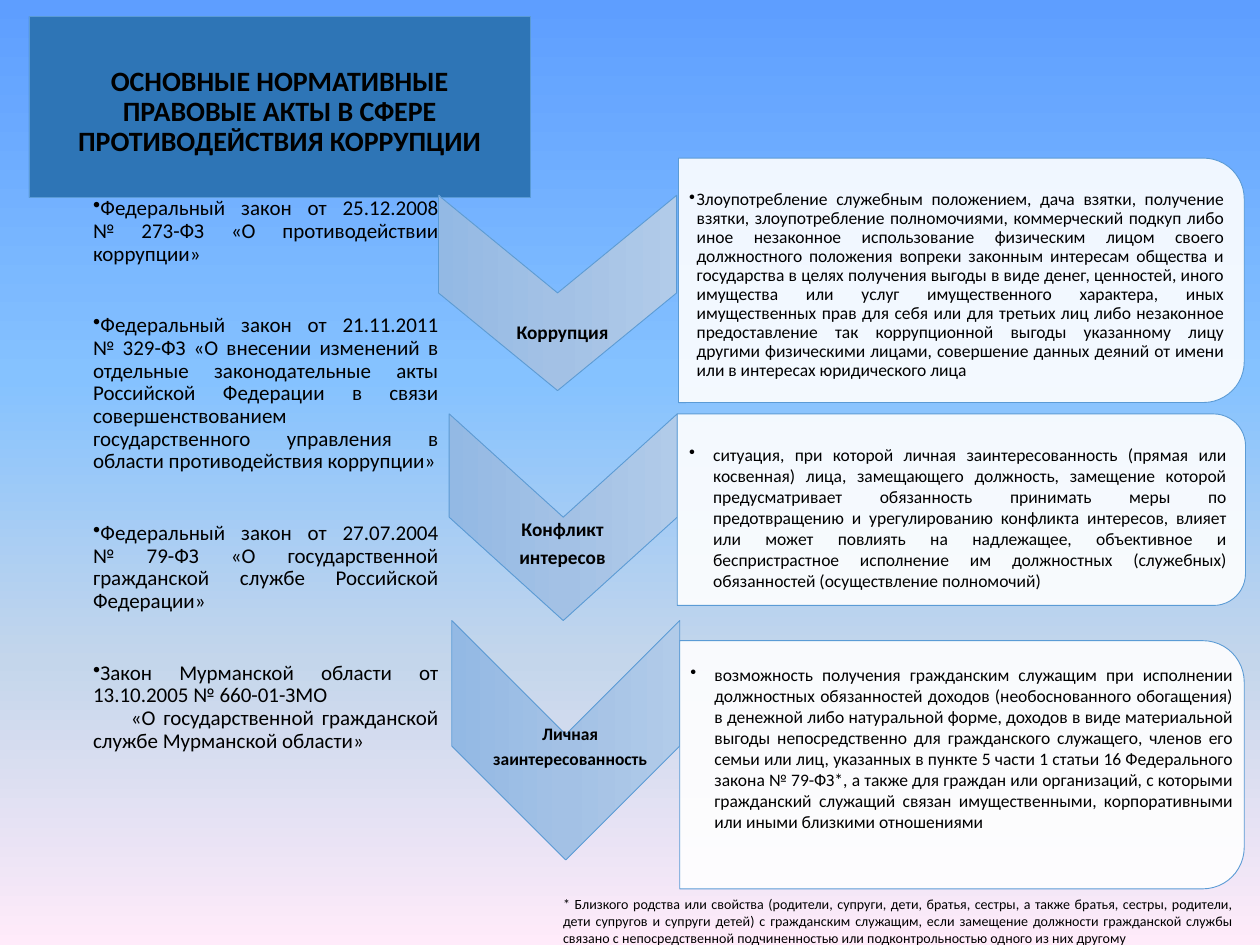
import copy

import pptx
import pptx.dml.color
import pptx.enum.shapes
import pptx.enum.text
import pptx.oxml
import pptx.oxml.ns
import pptx.util

COLUMNS, ROWS = 100, 75
colour = pptx.dml.color.RGBColor.from_string
qn = pptx.oxml.ns.qn
Pt = pptx.util.Pt
ALIGN = pptx.enum.text.PP_ALIGN
ANCHOR = pptx.enum.text.MSO_ANCHOR
PRESET = pptx.enum.shapes.MSO_SHAPE

deck = pptx.Presentation()
deck.slide_width = pptx.util.Inches(10)
deck.slide_height = pptx.util.Inches(7.5)
page = deck.slides.add_slide(deck.slide_layouts[6])
cell = deck.slide_width // COLUMNS


def blend(fill, owner, stops):
    """Fill downwards with a gradient of (percent, colour) stops."""
    fill.gradient()
    fill.gradient_angle = 270
    stop_list = owner.find(".//" + qn("a:gsLst"))
    while len(stop_list) < len(stops):
        stop_list.append(copy.deepcopy(stop_list[0]))
    for stop, (percent, shade) in zip(fill.gradient_stops, stops):
        stop.color.rgb = colour(shade)
        stop.position = percent / 100


def write(frame, lines, size, align, bold=False, spacing=1.0, after=0,
          bullet=False, hang=0, anchor=ANCHOR.TOP, insets=None):
    """Write one paragraph per line; a newline is a line break."""
    frame.word_wrap = True
    frame.vertical_anchor = anchor
    if insets:
        (frame.margin_left, frame.margin_top, frame.margin_right,
         frame.margin_bottom) = [int(inset * cell) for inset in insets]
    for number, line in enumerate(lines):
        para = frame.add_paragraph() if number else frame.paragraphs[0]
        para.alignment = align
        para.line_spacing = spacing
        para.space_before = Pt(0)
        para.space_after = Pt(after)
        for part_number, part in enumerate(line.split("\n")):
            if part_number:
                para.add_line_break()
            if part:
                span = para.add_run()
                span.text = part
                span.font.name = "Calibri"
                span.font.size = Pt(size)
                span.font.bold = bold
                span.font.color.rgb = colour("000000")
        for line_break in para._p.findall(qn("a:br")):
            line_break.get_or_add_rPr().set("sz", str(size * 100))
        if bullet:
            props = para._p.get_or_add_pPr()
            props.set("marL", str(int(hang * cell)))
            props.set("indent", str(-int(hang * cell)))
            mark = pptx.oxml.parse_xml(
                '<a:buChar xmlns:a="http://schemas.openxmlformats.org/'
                'drawingml/2006/main" char="•"/>')
            props.append(mark)


# Background
blend(page.background.fill, page._element,
      [(0, "5E9EFF"), (40, "85C2FF"), (70, "C4D6EB"), (100, "FFEBFA")])

# Title
title = page.shapes.add_shape(
    PRESET.RECTANGLE, *[int(n * cell) for n in (2.3, 1.3, 39.8, 14.4)])
title.shadow.inherit = False
title.fill.solid()
title.fill.fore_color.rgb = colour("2E75B6")
title.line.color.rgb = colour("5B9BD5")
title.line.width = Pt(0.5)
write(title.text_frame,
      ["ОСНОВНЫЕ НОРМАТИВНЫЕ ПРАВОВЫЕ АКТЫ В СФЕРЕ ПРОТИВОДЕЙСТВИЯ КОРРУПЦИИ\n"],
      16, ALIGN.CENTER, bold=True, spacing=0.9, anchor=ANCHOR.BOTTOM)

# List of laws
laws = [
    "Федеральный закон от 25.12.2008\n№ 273-ФЗ «О противодействии коррупции»",
    "Федеральный закон от 21.11.2011\n№ 329-ФЗ «О внесении изменений в "
    "отдельные законодательные акты Российской Федерации в связи "
    "совершенствованием государственного управления в области "
    "противодействия коррупции»",
    "Федеральный закон от 27.07.2004\n№ 79-ФЗ «О государственной "
    "гражданской службе Российской Федерации»",
    "Закон Мурманской области от 13.10.2005 № 660-01-ЗМО",
]
law_box = page.shapes.add_textbox(
    *[int(n * cell) for n in (6.4, 15.2, 29.4, 51.4)])
write(law_box.text_frame, laws, 12, ALIGN.JUSTIFY, spacing=0.9, bullet=True)
for para in law_box.text_frame.paragraphs[1:]:
    para.space_before = Pt(28)
# The last law's name is an indented paragraph of its own
name = law_box.text_frame.add_paragraph()
name.alignment = ALIGN.JUSTIFY
name.line_spacing = 0.9
name.space_before = Pt(0)
name._p.get_or_add_pPr().set("marL", "0")
name._p.get_or_add_pPr().set("indent", str(3 * cell))
span = name.add_run()
span.text = "«О государственной гражданской службе Мурманской области»"
span.font.name = "Calibri"
span.font.size = Pt(12)
span.font.color.rgb = colour("000000")

# Terms: chevron, label place, label top inset, label, label size,
# panel, definition place, hanging indent, line spacing, definition
terms = [
    ((36.5, 13.8, 15.5, 18.9), (35.2, 16.4, 18.9, 15.5), 4.7,
     ["Коррупция"], 11,
     (66.6, -0.2, 19.4, 44.9), (53.9, 13.9, 43.3, 17.5), 0.6, 0.9,
     "Злоупотребление служебным положением, дача взятки, получение взятки, "
     "злоупотребление полномочиями, коммерческий подкуп либо иное незаконное "
     "использование физическим лицом своего должностного положения вопреки "
     "законным интересам общества и государства в целях получения выгоды в "
     "виде денег, ценностей, иного имущества или услуг имущественного "
     "характера, иных имущественных прав для себя или для третьих лиц либо "
     "незаконное предоставление так коррупционной выгоды указанному лицу "
     "другими физическими лицами, совершение данных деяний от имени или в "
     "интересах юридического лица"),
    ((36.5, 32, 16.4, 18.1), (35.6, 40.9, 18.1, 4.6), 0.1,
     ["Конфликт", "интересов"], 11,
     (68.7, 17.9, 15.2, 45.1), (53.9, 34.2, 43.5, 13.7), 1.9, 1.0,
     "ситуация, при которой личная заинтересованность (прямая или косвенная) "
     "лица, замещающего должность, замещение которой предусматривает "
     "обязанность принимать меры по предотвращению и урегулированию "
     "конфликта интересов, влияет или может повлиять на надлежащее, "
     "объективное и беспристрастное исполнение им должностных (служебных) "
     "обязанностей (осуществление полномочий)"),
    ((35.4, 49.7, 19, 18.1), (36.4, 57.3, 17.7, 4.1), 0.1,
     ["Личная", "заинтересованность"], 10,
     (66.5, 38.3, 19.7, 44.8), (54, 48.1, 43.9, 22.5), 1.9, 1.0,
     "возможность получения гражданским служащим при исполнении должностных "
     "обязанностей доходов (необоснованного обогащения) в денежной либо "
     "натуральной форме, доходов в виде материальной выгоды непосредственно "
     "для гражданского служащего, членов его семьи или лиц, указанных в "
     "пункте 5 части 1 статьи 16 Федерального закона № 79-ФЗ*, а также для "
     "граждан или организаций, с которыми гражданский служащий связан "
     "имущественными, корпоративными или иными близкими отношениями"),
]
for (chevron_place, label_place, label_inset, label, label_size, panel_place,
     text_place, hang, spacing, definition) in terms:
    # Both outlines are turned a quarter clockwise
    for preset, place in ((PRESET.CHEVRON, chevron_place),
                          (PRESET.ROUND_2_SAME_RECTANGLE, panel_place)):
        shape = page.shapes.add_shape(preset, *[int(n * cell) for n in place])
        shape.rotation = 90
        shape.shadow.inherit = False
        shape.line.color.rgb = colour("5B9BD5")
        shape.line.width = Pt(0.5)
        if preset == PRESET.CHEVRON:
            blend(shape.fill, shape._element,
                  [(0, "B1CBE9"), (50, "A3C1E5"), (100, "93B9E4")])
        else:
            shape.fill.solid()
            shape.fill.fore_color.rgb = colour("FFFFFF")
            shade = shape._element.spPr.find(".//" + qn("a:srgbClr"))
            shade.append(pptx.oxml.parse_xml(
                '<a:alpha xmlns:a="http://schemas.openxmlformats.org/'
                'drawingml/2006/main" val="90000"/>'))

    label_box = page.shapes.add_textbox(*[int(n * cell) for n in label_place])
    write(label_box.text_frame, label, label_size, ALIGN.CENTER, bold=True,
          spacing=0.9, after=0.35 * label_size, anchor=ANCHOR.MIDDLE,
          insets=(0.1, label_inset, 0.1, 0.1))
    text_box = page.shapes.add_textbox(*[int(n * cell) for n in text_place])
    write(text_box.text_frame, [definition], 10, ALIGN.JUSTIFY,
          spacing=spacing, bullet=True, hang=hang, anchor=ANCHOR.MIDDLE,
          insets=(0.8, 0.1, 0.1, 0.1))

# Footnote
footnote = page.shapes.add_textbox(
    *[int(n * cell) for n in (43.7, 70.6, 55.2, 5)])
write(footnote.text_frame,
      ["* Близкого родства или свойства (родители, супруги, дети, братья, "
       "сестры, а также братья, сестры, родители, дети супругов и супруги "
       "детей) с гражданским служащим, если замещение должности гражданской "
       "службы связано с непосредственной подчиненностью или "
       "подконтрольностью одного из них другому"], 8, ALIGN.JUSTIFY)

deck.save("out.pptx")
